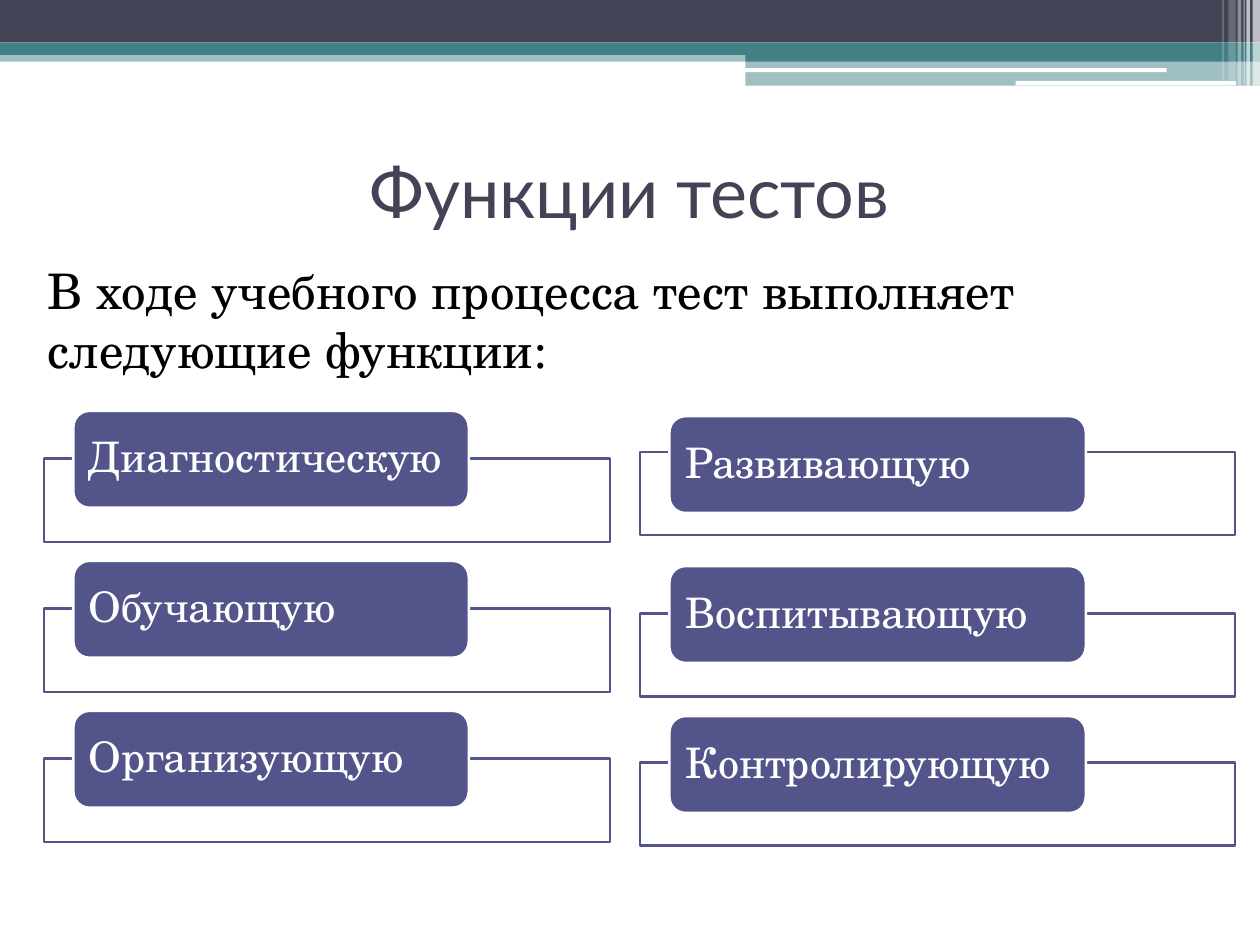
from lxml.etree import SubElement
from pptx import Presentation
from pptx.dml.color import RGBColor
from pptx.enum.shapes import MSO_SHAPE
from pptx.enum.text import MSO_ANCHOR, PP_ALIGN
from pptx.oxml.ns import qn
from pptx.util import Pt

COLORS = {"navy": "424456", "teal": "438086", "violet": "53548A",
          "white": "FFFFFF", "black": "000000"}
TITLE_FONT, BODY_FONT = "Lato", "TeX Gyre Schola"

TITLE = "Функции тестов"
INTRO = "В ходе учебного процесса тест выполняет следующие функции:"

# left, top, width, height, color, opacity in percent
BANDS = [
    (0, 28.8, 720, 6.5, "teal", 50),
    (0, 0, 720, 24.2, "navy", 100),
    (0, 24.2, 720, 7.2, "teal", 100),
    (426, 28, 294, 7.2, "teal", 100),
    (426, 35.2, 294, 13.7, "teal", 50),
]
HIGHLIGHTS = [
    (425.5, 39, 241.2, 2.2, "white", 100),
    (580.3, 46.2, 126, 2.6, "white", 100),
]
# left, width, height, opacity in percent
STRIPES = [
    (715.8, 4.2, 49, 65), (712.2, 2, 49, 65), (710.6, 0.7, 49, 60),
    (707.2, 2, 49, 40), (702, 4.2, 46, 20), (698.5, 0.7, 46, 30),
]

COLUMNS = [
    {"frame_left": 25.2, "frame_width": 323.4, "label_width": 226, "top": 234.8, "inset": 5.9,
     "items": [("Диагностическую", 27.4), ("Обучающую", 27.4), ("Организующую", 27.4)]},
    {"frame_left": 365.8, "frame_width": 340, "label_width": 238, "top": 237.8, "inset": 6.7,
     "items": [("Развивающую", 20.5), ("Воспитывающую", 27.2), ("Контролирующую", 26.6)]},
]
ROW_PITCH, LABEL_HEIGHT, FRAME_HEIGHT, LABEL_INDENT = 85.7, 55.4, 47.5, 16.7


def color(name):
    return RGBColor.from_string(COLORS[name])


def add_box(page, kind, left, top, width, height, fill, opacity=100, line=None):
    box = page.shapes.add_shape(kind, Pt(left), Pt(top), Pt(width), Pt(height))
    box.shadow.inherit = False
    box.fill.solid()
    box.fill.fore_color.rgb = color(fill)
    if opacity < 100:
        tint = box.fill._xPr.find(qn("a:solidFill"))[0]
        SubElement(tint, qn("a:alpha"), val=str(opacity * 1000))
    if line:
        box.line.color.rgb = color(line)
        box.line.width = Pt(1.5)
    else:
        box.line.fill.background()
    return box


def write(box, text, font, size, tone, anchor, align=PP_ALIGN.LEFT):
    frame = box.text_frame
    frame.word_wrap = True
    frame.vertical_anchor = anchor
    para = frame.paragraphs[0]
    para.text = text
    para.alignment = align
    para.font.name = font
    para.font.size = Pt(size)
    para.font.color.rgb = color(tone)
    return para


def add_text(page, left, top, width, height, *style):
    box = page.shapes.add_textbox(Pt(left), Pt(top), Pt(width), Pt(height))
    write(box, *style)


def add_header(page):
    for band in BANDS:
        add_box(page, MSO_SHAPE.RECTANGLE, *band)
    for highlight in HIGHLIGHTS:
        add_box(page, MSO_SHAPE.ROUNDED_RECTANGLE, *highlight)
    for left, width, height, opacity in STRIPES:
        add_box(page, MSO_SHAPE.RECTANGLE, left, 0, width, height, "white", opacity)


def add_column(page, column):
    """Draw one stack of frames, each with a label over its top edge."""
    for row, (name, frame_drop) in enumerate(column["items"]):
        top = column["top"] + row * ROW_PITCH
        left = column["frame_left"]
        add_box(page, MSO_SHAPE.RECTANGLE, left, top + frame_drop,
                column["frame_width"], FRAME_HEIGHT, "white", 90, "violet")
        label = add_box(page, MSO_SHAPE.ROUNDED_RECTANGLE, left + LABEL_INDENT, top,
                        column["label_width"], LABEL_HEIGHT, "violet", line="white")
        para = write(label, name, BODY_FONT, 24, "white", MSO_ANCHOR.MIDDLE)
        para.line_spacing = 0.9
        frame = label.text_frame
        frame.margin_left = frame.margin_right = Pt(column["inset"])
        frame.margin_top = frame.margin_bottom = 0


def main():
    deck = Presentation()
    deck.slide_width, deck.slide_height = Pt(720), Pt(540)
    page = deck.slides.add_slide(deck.slide_layouts[6])
    add_header(page)
    add_text(page, 36, 66.2, 647.3, 85, TITLE, TITLE_FONT, 40, "navy",
             MSO_ANCHOR.MIDDLE, PP_ALIGN.CENTER)
    for column in COLUMNS:
        add_column(page, column)
    add_text(page, 20.2, 145.4, 680.4, 97.2, INTRO, BODY_FONT, 28, "black", MSO_ANCHOR.TOP)
    deck.save("out.pptx")


if __name__ == "__main__":
    main()
